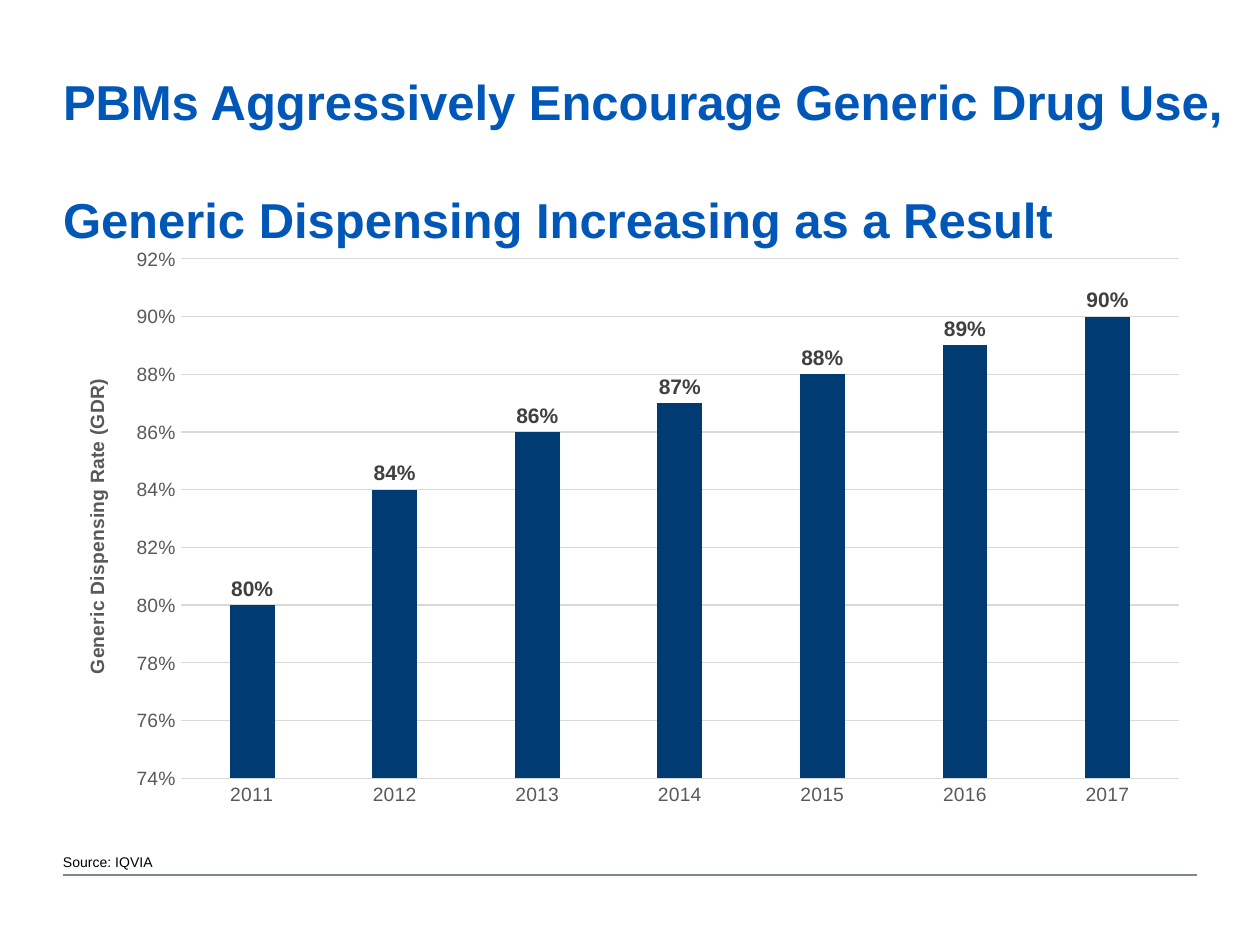
from lxml import etree
from pptx import Presentation
from pptx.chart.data import CategoryChartData
from pptx.dml.color import RGBColor
from pptx.enum.chart import XL_CHART_TYPE, XL_LABEL_POSITION, XL_TICK_MARK
from pptx.enum.shapes import MSO_CONNECTOR
from pptx.enum.text import MSO_ANCHOR, MSO_AUTO_SIZE, PP_ALIGN
from pptx.oxml import parse_xml
from pptx.oxml.ns import nsdecls, qn
from pptx.util import Cm, Pt

COLUMN_CLUSTERED = XL_CHART_TYPE.COLUMN_CLUSTERED
OUTSIDE_END = XL_LABEL_POSITION.OUTSIDE_END
NO_TICK = XL_TICK_MARK.NONE
STRAIGHT = MSO_CONNECTOR.STRAIGHT
TOP, BOTTOM = MSO_ANCHOR.TOP, MSO_ANCHOR.BOTTOM
NO_AUTOFIT = MSO_AUTO_SIZE.NONE
LEFT = PP_ALIGN.LEFT

BLUE = RGBColor(0x00, 0x57, 0xB8)
NAVY = RGBColor(0x00, 0x3C, 0x71)
SLATE = RGBColor(0x7C, 0x87, 0x8E)
BLACK = RGBColor(0x00, 0x00, 0x00)
LABEL_GRAY = RGBColor(0x40, 0x40, 0x40)
AXIS_GRAY = RGBColor(0x59, 0x59, 0x59)
GRID_GRAY = RGBColor(0xD9, 0xD9, 0xD9)

FONT = "Arial"
MARGIN = Cm(1.27)
CONTENT_WIDTH = Cm(22.86)
TITLE = (
    "PBMs Aggressively Encourage Generic Drug Use, \v"
    "Generic Dispensing Increasing as a Result"
)
DISPENSING_RATES = {
    "2011": 0.80,
    "2012": 0.84,
    "2013": 0.86,
    "2014": 0.87,
    "2015": 0.88,
    "2016": 0.89,
    "2017": 0.90,
}
PLOT_AREA = {"x": 0.104, "y": 0.095, "w": 0.88, "h": 0.778}


def style_font(font, size, color, bold=False):
    font.name = FONT
    font.size = Pt(size)
    font.bold = bold
    font.color.rgb = color


def style_line(line, color, width):
    line.color.rgb = color
    line.width = Pt(width)


def prepare_frame(frame, anchor, padding):
    frame.word_wrap = True
    frame.auto_size = NO_AUTOFIT
    frame.vertical_anchor = anchor
    frame.margin_left = frame.margin_right = 0
    frame.margin_top = frame.margin_bottom = padding


def set_title(slide):
    title = slide.shapes.title
    title.left, title.top = MARGIN, Cm(1.45)
    title.width, title.height = Cm(23.52), Cm(2.49)
    prepare_frame(title.text_frame, TOP, 0)
    paragraph = title.text_frame.paragraphs[0]
    paragraph.text = TITLE
    paragraph.alignment = LEFT
    style_font(paragraph.font, 28, BLUE, True)


def add_rule(slide):
    y = Cm(17.64)
    rule = slide.shapes.add_connector(STRAIGHT, MARGIN, y, MARGIN + CONTENT_WIDTH, y)
    style_line(rule.line, SLATE, 1)
    etree.SubElement(rule._element.spPr, qn("a:effectLst"))


def add_source(slide):
    box = slide.shapes.add_textbox(MARGIN, Cm(17.04), Cm(23.93), Cm(0.64))
    prepare_frame(box.text_frame, BOTTOM, Cm(0.13))
    paragraph = box.text_frame.paragraphs[0]
    paragraph.text = "Source: IQVIA"
    style_font(paragraph.font, 8, BLACK)


def place_plot_area(chart):
    plot_area = chart._chartSpace.chart.plotArea
    for layout in plot_area.findall(qn("c:layout")):
        plot_area.remove(layout)
    sizes = "".join(f'<c:{key} val="{value}"/>' for key, value in PLOT_AREA.items())
    plot_area.insert(0, parse_xml(
        f'<c:layout {nsdecls("c")}><c:manualLayout><c:layoutTarget val="inner"/>'
        f'<c:xMode val="edge"/><c:yMode val="edge"/>{sizes}'
        "</c:manualLayout></c:layout>"
    ))


def style_axes(chart):
    for axis in (chart.category_axis, chart.value_axis):
        axis.major_tick_mark = axis.minor_tick_mark = NO_TICK
        style_font(axis.tick_labels.font, 11, AXIS_GRAY)
    style_line(chart.category_axis.format.line, GRID_GRAY, 0.75)

    axis = chart.value_axis
    axis.minimum_scale, axis.maximum_scale, axis.major_unit = 0.74, 0.92, 0.02
    axis.format.line.fill.background()
    style_line(axis.major_gridlines.format.line, GRID_GRAY, 0.75)
    axis.tick_labels.number_format = "0%"
    axis.tick_labels.number_format_is_linked = False
    frame = axis.axis_title.text_frame
    frame.text = "Generic Dispensing Rate (GDR)"
    style_font(frame.paragraphs[0].font, 11, AXIS_GRAY, True)
    body = frame._txBody.find(qn("a:bodyPr"))
    body.set("rot", "-5400000")
    body.set("vert", "horz")


def style_columns(plot):
    plot.gap_width, plot.overlap = 219, -27
    plot.vary_by_categories = False
    series = plot.series[0]
    series.format.fill.solid()
    series.format.fill.fore_color.rgb = NAVY
    labels = series.data_labels
    labels.show_value = True
    labels.position = OUTSIDE_END
    labels.number_format = "0%"
    labels.number_format_is_linked = False
    style_font(labels.font, 12, LABEL_GRAY, True)


def add_rate_chart(slide):
    data = CategoryChartData(number_format="0%")
    data.categories = list(DISPENSING_RATES)
    data.add_series("Series 1", list(DISPENSING_RATES.values()))
    chart = slide.shapes.add_chart(
        COLUMN_CLUSTERED, MARGIN, Cm(3.94), CONTENT_WIDTH, Cm(13.46), data
    ).chart
    chart.has_title = chart.has_legend = False
    style_font(chart.font, 10, BLACK)
    place_plot_area(chart)
    style_axes(chart)
    style_columns(chart.plots[0])


def main():
    presentation = Presentation()
    presentation.slide_width, presentation.slide_height = Cm(25.4), Cm(19.05)
    slide = presentation.slides.add_slide(presentation.slide_layouts[5])
    add_rule(slide)
    add_rate_chart(slide)
    set_title(slide)
    add_source(slide)
    presentation.save("out.pptx")


if __name__ == "__main__":
    main()
